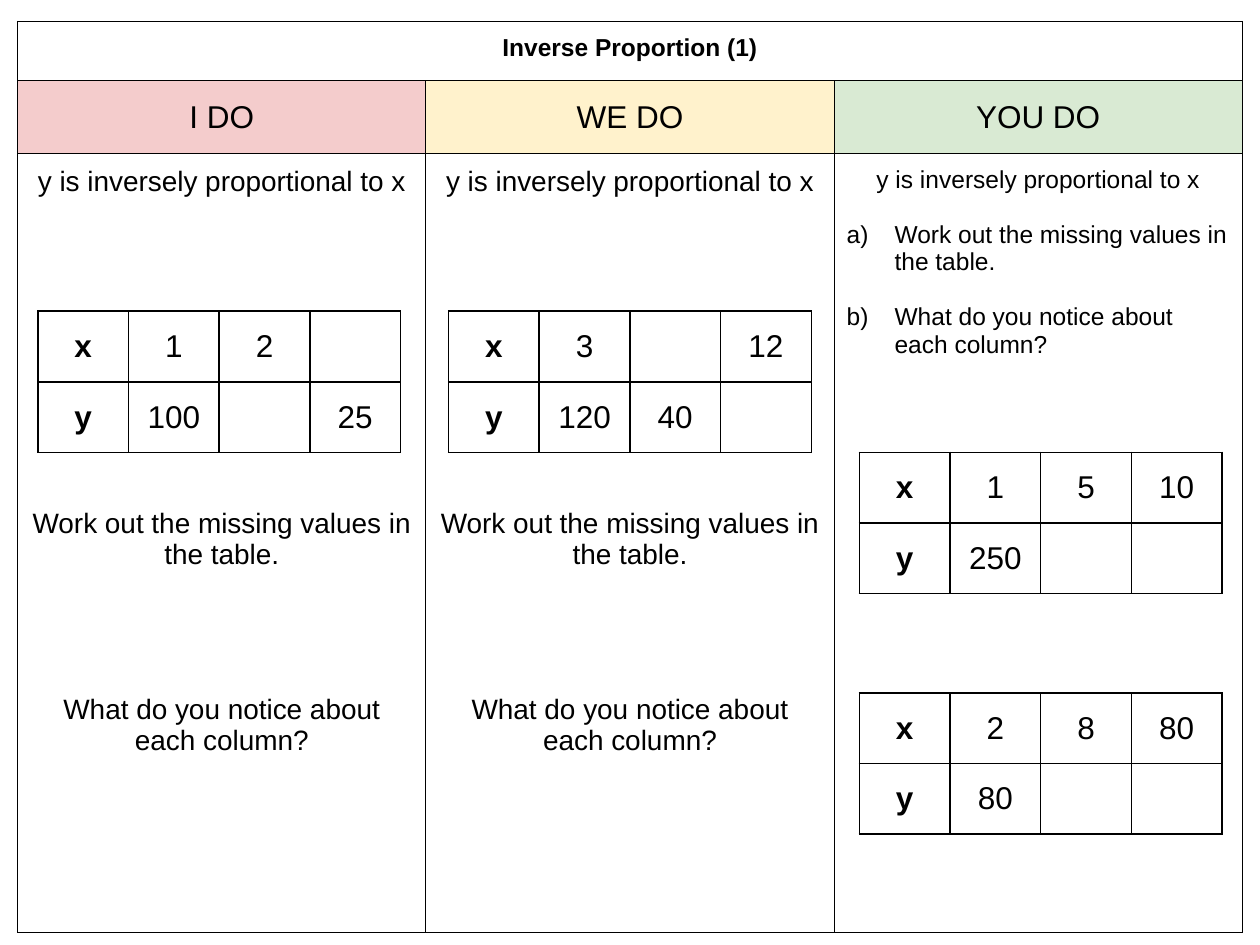
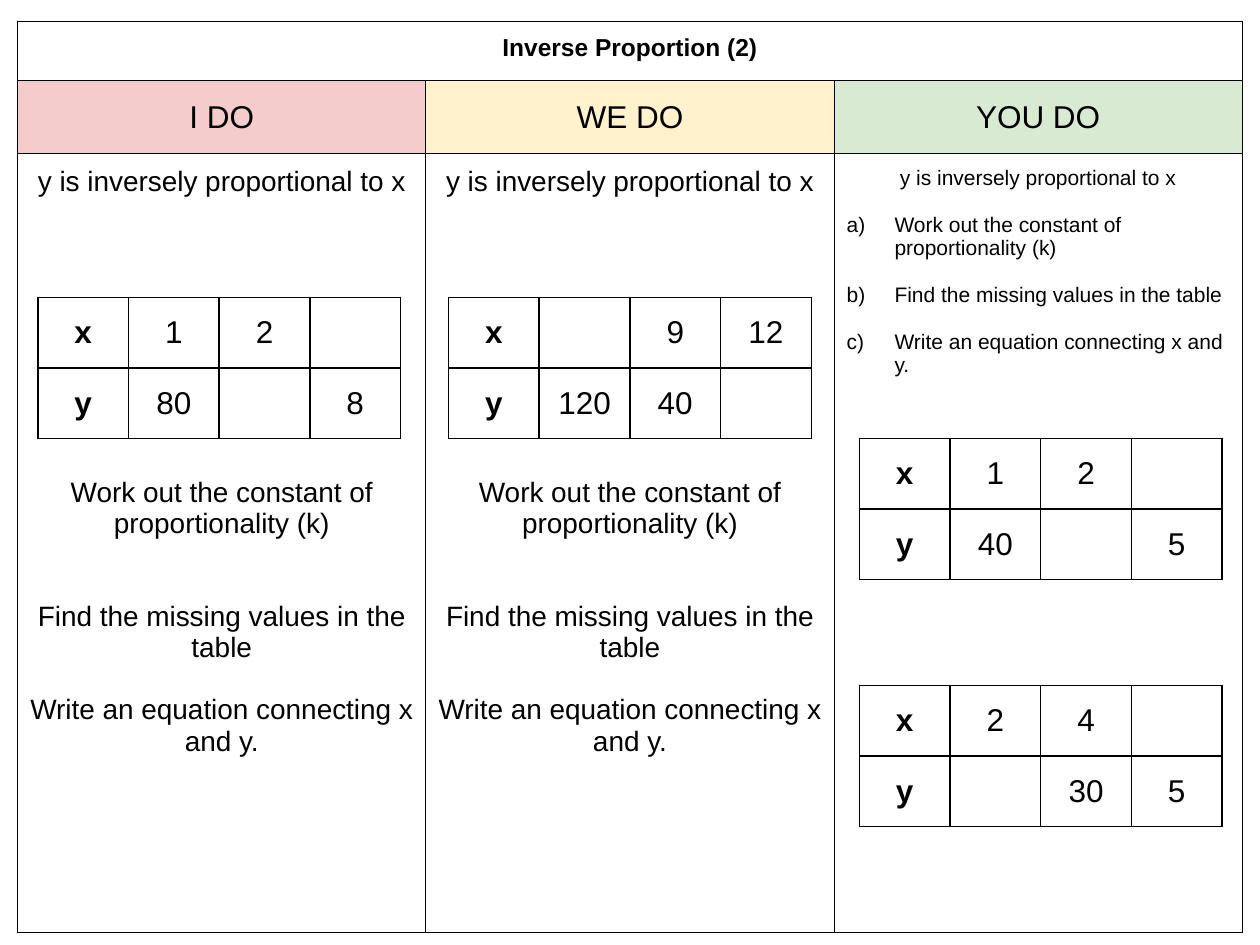
from lxml import etree
from pptx import Presentation
from pptx.dml.color import RGBColor
from pptx.enum.text import MSO_ANCHOR, PP_ALIGN
from pptx.oxml.ns import qn
from pptx.util import Inches, Pt

LEFT, CENTER = PP_ALIGN.LEFT, PP_ALIGN.CENTER
TOP, MIDDLE = MSO_ANCHOR.TOP, MSO_ANCHOR.MIDDLE

BLACK = RGBColor(0x00, 0x00, 0x00)
PINK = RGBColor(0xF4, 0xCC, 0xCC)
YELLOW = RGBColor(0xFF, 0xF2, 0xCC)
GREEN = RGBColor(0xD9, 0xEA, 0xD3)

FONT = "Arial"
BLANK_LAYOUT = 6
LINE_HEIGHT = 1.11  # height of one text line, relative to the font size
LIST_INDENT = 0.38
HEADINGS = [("I DO", PINK), ("WE DO", YELLOW), ("YOU DO", GREEN)]
STATEMENT = "y is inversely proportional to x"

FRAME_LEFT, FRAME_TOP = 0.14, 0.17
FRAME_COLUMNS = [3.24] * 3
FRAME_ROWS = [0.47, 0.58, 6.18]
VALUES_LEFT, VALUES_STEP = 0.3, 3.26
VALUES_COLUMNS = [0.72] * 4
VALUES_ROWS = [0.56] * 2

# prompts: (text, empty lines above it) for the two worked examples
# values: (frame column, top, x row, y row)
LESSONS = [
    {
        "title": "Inverse Proportion (1)",
        "prompts": [
            ("Work out the missing values in the table.", 10),
            ("What do you notice about each column?", 4),
        ],
        "task_size": 14,
        "values": [
            (0, 2.47, ["1", "2", ""], ["100", "", "25"]),
            (1, 2.47, ["3", "", "12"], ["120", "40", ""]),
            (2, 3.59, ["1", "5", "10"], ["250", "", ""]),
            (2, 5.5, ["2", "8", "80"], ["80", "", ""]),
        ],
    },
    {
        "title": "Inverse Proportion (2)",
        "prompts": [
            ("Work out the constant of proportionality (k)", 9),
            ("Find the missing values in the table", 2),
            ("Write an equation connecting x and y.", 1),
        ],
        "task_size": 12,
        "values": [
            (0, 2.36, ["1", "2", ""], ["80", "", "8"]),
            (1, 2.36, ["", "9", "12"], ["120", "40", ""]),
            (2, 3.48, ["1", "2", ""], ["40", "", "5"]),
            (2, 5.44, ["2", "4", ""], ["", "30", "5"]),
        ],
    },
]


def set_borders(cell, width):
    properties = cell._tc.get_or_add_tcPr()
    for position, side in enumerate(("lnL", "lnR", "lnT", "lnB")):
        line = etree.Element(qn(f"a:{side}"), w=str(Pt(width)))
        fill = etree.SubElement(line, qn("a:solidFill"))
        etree.SubElement(fill, qn("a:srgbClr"), val=str(BLACK))
        properties.insert(position, line)


def add_grid(slide, left, top, columns, rows, border):
    """Add a plain table with black borders and unfilled cells."""
    frame = slide.shapes.add_table(
        len(rows), len(columns), Inches(left), Inches(top),
        Inches(sum(columns)), Inches(sum(rows)))
    table = frame.table
    table.first_row = table.horz_banding = False
    for column, width in zip(table.columns, columns):
        column.width = Inches(width)
    for row, height in zip(table.rows, rows):
        row.height = Inches(height)
    for cell in table.iter_cells():
        cell.fill.background()
        set_borders(cell, border)
    return table


def letter_paragraph(paragraph):
    """Number the paragraph a), b), c) with a hanging indent."""
    properties = paragraph._p.get_or_add_pPr()
    properties.set("marL", str(Inches(LIST_INDENT)))
    properties.set("indent", str(-Inches(LIST_INDENT)))
    color = etree.SubElement(properties, qn("a:buClr"))
    etree.SubElement(color, qn("a:srgbClr"), val=str(BLACK))
    etree.SubElement(properties, qn("a:buAutoNum"), type="alphaLcParenR")


def write(cell, text, size=18, bold=False, align=CENTER, lines_above=0,
          lettered=False):
    """Write into the cell, in a new paragraph if it already holds text."""
    text_frame = cell.text_frame
    paragraph = text_frame.add_paragraph() if text_frame.text else text_frame.paragraphs[0]
    paragraph.alignment = align
    if lines_above:
        paragraph.space_before = Pt(lines_above * size * LINE_HEIGHT)
    if lettered:
        letter_paragraph(paragraph)
    run = paragraph.add_run()
    run.text = text
    run.font.name = FONT
    run.font.size = Pt(size)
    run.font.bold = bold
    run.font.color.rgb = BLACK


def add_lesson_frame(slide, title, prompts, task_size):
    table = add_grid(slide, FRAME_LEFT, FRAME_TOP, FRAME_COLUMNS, FRAME_ROWS, 0.75)
    for cell in table.iter_cells():
        cell.margin_left = cell.margin_right = Inches(0.1)
        cell.margin_top = cell.margin_bottom = Inches(0.1)
        cell.vertical_anchor = TOP
    table.cell(0, 0).merge(table.cell(0, 2))
    write(table.cell(0, 0), title, size=14, bold=True)

    for column, (heading, color) in enumerate(HEADINGS):
        heading_cell = table.cell(1, column)
        heading_cell.vertical_anchor = MIDDLE
        heading_cell.fill.solid()
        heading_cell.fill.fore_color.rgb = color
        write(heading_cell, heading)

    for column in (0, 1):
        example_cell = table.cell(2, column)
        write(example_cell, STATEMENT, size=16)
        for prompt, lines_above in prompts:
            write(example_cell, prompt, size=16, lines_above=lines_above)

    task_cell = table.cell(2, 2)
    write(task_cell, STATEMENT, size=task_size)
    for prompt, _ in prompts:
        write(task_cell, prompt, size=task_size, align=LEFT, lines_above=1,
              lettered=True)


def add_values_table(slide, column, top, x_values, y_values):
    left = VALUES_LEFT + column * VALUES_STEP
    table = add_grid(slide, left, top, VALUES_COLUMNS, VALUES_ROWS, 1)
    for row, texts in enumerate((["x"] + x_values, ["y"] + y_values)):
        for position, text in enumerate(texts):
            cell = table.cell(row, position)
            cell.vertical_anchor = MIDDLE
            if text:
                write(cell, text, bold=position == 0)


def main():
    presentation = Presentation()
    presentation.slide_width = Inches(10)
    presentation.slide_height = Inches(7.5)
    for lesson in LESSONS:
        slide = presentation.slides.add_slide(presentation.slide_layouts[BLANK_LAYOUT])
        add_lesson_frame(slide, lesson["title"], lesson["prompts"], lesson["task_size"])
        for values in lesson["values"]:
            add_values_table(slide, *values)
    presentation.save("out.pptx")


if __name__ == "__main__":
    main()
